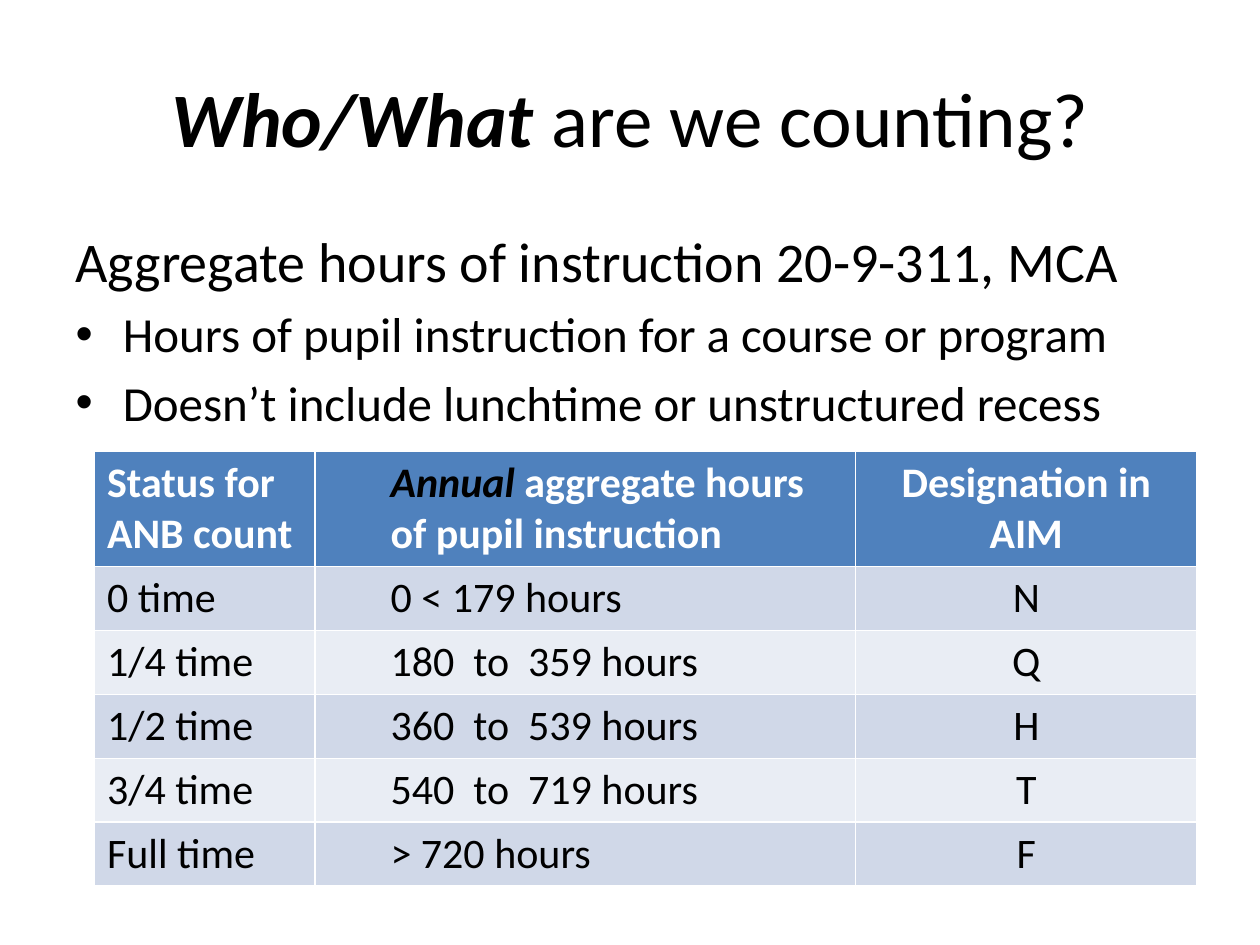
from lxml.etree import SubElement
from pptx import Presentation
from pptx.dml.color import RGBColor as RGB
from pptx.enum.text import MSO_ANCHOR as Anchor, PP_ALIGN as Align
from pptx.oxml.ns import qn
from pptx.util import Pt

FONT = "Calibri"
COLORS = {"text": "000000", "head": "4F81BD", "white": "FFFFFF",
          "odd": "D0D8E8", "even": "E9EDF4"}


def style(run, size, color="text", bold=False, italic=False):
    font = run.font
    font.name, font.size = FONT, Pt(size)
    font.bold, font.italic = bold, italic
    font.color.rgb = RGB.from_string(COLORS[color])


def indent(para, left, first=0):
    """Set the left margin and first-line indent in points."""
    props = para._p.get_or_add_pPr()
    props.set("marL", str(Pt(left)))
    props.set("indent", str(Pt(first)))
    return props


deck = Presentation()
deck.slide_width, deck.slide_height = Pt(720), Pt(540)
slide = deck.slides.add_slide(deck.slide_layouts[1])

# Title
title = slide.shapes.title
title.left, title.top, title.width, title.height = Pt(36), Pt(21.6), Pt(648), Pt(90)
title.text_frame.vertical_anchor = Anchor.MIDDLE
para = title.text_frame.paragraphs[0]
para.alignment = Align.CENTER
for text, strong in (("Who/What ", True), ("are we counting?", False)):
    run = para.add_run()
    run.text = text
    style(run, 44, bold=strong, italic=strong)

# List with an unbulleted lead line
body = slide.placeholders[1]
body.left, body.top, body.width, body.height = Pt(36), Pt(126), Pt(648), Pt(384)
body.text_frame.text = "\n".join((
    "Aggregate hours of instruction 20-9-311, MCA",
    "Hours of pupil instruction for a course or program",
    "Doesn’t include lunchtime or unstructured recess",
))
for n, para in enumerate(body.text_frame.paragraphs):
    if n == 0:
        SubElement(indent(para, 0), qn("a:buNone"))
    else:
        SubElement(indent(para, 27, -27), qn("a:buChar")).set("char", "•")
    style(para.runs[0], 28 if n else 32)

# Table
rows = [
    ("Status for ANB count", "Annual aggregate hours of pupil instruction",
     "Designation in AIM"),
    ("0 time", "0 < 179 hours", "N"),
    ("1/4 time", "180  to  359 hours", "Q"),
    ("1/2 time", "360  to  539 hours", "H"),
    ("3/4 time", "540  to  719 hours", "T"),
    ("Full time", "> 720 hours", "F"),
]
widths = (126, 309, 195)
frame = slide.shapes.add_table(len(rows), len(widths), Pt(54), Pt(258),
                               Pt(sum(widths)), Pt(245))
table = frame.table
for col, width in zip(table.columns, widths):
    col.width = Pt(width)
for r, texts in enumerate(rows):
    table.rows[r].height = Pt(36 if r else 65)
    fill = "head" if r == 0 else "odd" if r % 2 else "even"
    for c, text in enumerate(texts):
        cell = table.cell(r, c)
        cell.fill.solid()
        cell.fill.fore_color.rgb = RGB.from_string(COLORS[fill])
        para = cell.text_frame.paragraphs[0]
        if c == 1:
            para.level = 1
            indent(para, 36)
        elif c == 2:
            para.alignment = Align.CENTER
        para.text = text
        style(para.runs[0], 24, "text" if r else "white", bold=r == 0)

# The first word of the middle heading stands out
para = table.cell(0, 1).text_frame.paragraphs[0]
first, rest = para.runs[0], para.add_run()
first.text, rest.text = "Annual ", "aggregate hours of pupil instruction"
style(first, 24, bold=True, italic=True)
style(rest, 24, "white", bold=True)

deck.save("out.pptx")
